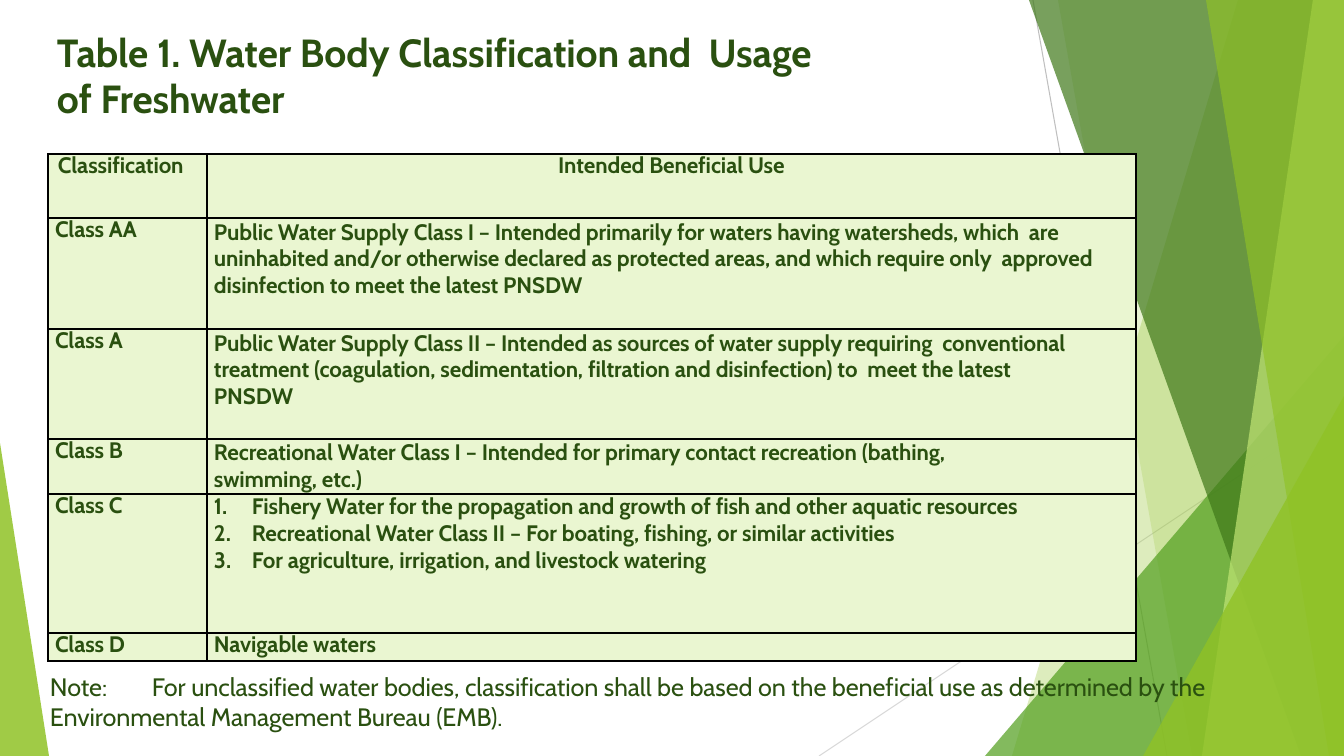
from lxml import etree
from pptx import Presentation
from pptx import util as u
from pptx.dml.color import RGBColor
from pptx.enum import shapes, text
from pptx.oxml import ns

PX = 12192000 / 1344
WIDTH, HEIGHT = 1344, 756

DARK_GREEN = RGBColor(0x2A, 0x50, 0x10)
PALE_GREEN = RGBColor(0xEA, 0xF6, 0xD1)
LIME = RGBColor(0x90, 0xC2, 0x26)
GREEN = RGBColor(0x54, 0xA0, 0x21)
FOREST = RGBColor(0x3F, 0x78, 0x19)
LIGHT_LIME = RGBColor(0xC0, 0xE4, 0x74)
GREY = RGBColor(0xBF, 0xBF, 0xBF)
LIGHT_GREY = RGBColor(0xD9, 0xD9, 0xD9)


def add_xml(parent, tag, **attributes):
    return etree.SubElement(parent, ns.qn(tag), attributes)


def format_paragraph(paragraph, size, bold, line_spacing, space_before=0):
    paragraph.line_spacing = line_spacing
    paragraph.space_before = u.Pt(space_before)
    for run in paragraph.runs:
        run.font.name = "Cabin"
        run.font.size = u.Pt(size)
        run.font.bold = bold
        run.font.color.rgb = DARK_GREEN
        run.font._element.set("spc", "-5")


prs = Presentation()
prs.slide_width = round(WIDTH * PX)
prs.slide_height = round(HEIGHT * PX)
slide = prs.slides.add_slide(prs.slide_layouts[5])

# Thin lines behind the facets
for x1, y1, x2, y2, color in [
    (1033, 0, 1167, HEIGHT, GREY),
    (WIDTH, 406, 819, HEIGHT, LIGHT_GREY),
]:
    ray = slide.shapes.add_connector(
        shapes.MSO_CONNECTOR.STRAIGHT, *(round(v * PX) for v in (x1, y1, x2, y2)))
    ray.line.color.rgb = color
    ray.line.width = u.Pt(0.75)
    add_xml(ray._element.spPr, "a:effectLst")

# Translucent facets: outline, colour, opacity in percent
TOP_RIGHT, BOTTOM_RIGHT = (WIDTH, 0), (WIDTH, HEIGHT)
for outline, color, opacity in [
    ([TOP_RIGHT, (1238, 0), (1012, HEIGHT), BOTTOM_RIGHT], LIME, 30),
    ([TOP_RIGHT, (1058, 0), (1192, HEIGHT), BOTTOM_RIGHT], LIME, 20),
    ([(WIDTH, 336), (985, HEIGHT), BOTTOM_RIGHT], GREEN, 72),
    ([TOP_RIGHT, (1029, 0), (1301, HEIGHT), BOTTOM_RIGHT], FOREST, 70),
    ([TOP_RIGHT, (1313, 0), (1202, HEIGHT), BOTTOM_RIGHT], LIGHT_LIME, 70),
    ([TOP_RIGHT, (1206, 0), (1329, HEIGHT), BOTTOM_RIGHT], LIME, 65),
    ([(WIDTH, 396), (1143, HEIGHT), BOTTOM_RIGHT], LIME, 80),
    ([(0, 443), (0, HEIGHT), (49, HEIGHT)], LIME, 85),
]:
    builder = slide.shapes.build_freeform(*outline[0], scale=PX)
    builder.add_line_segments(outline[1:], close=True)
    facet = builder.convert_to_shape()
    facet.shadow.inherit = False
    facet.line.fill.background()
    facet.fill.solid()
    facet.fill.fore_color.rgb = color
    tint = facet._element.spPr.find(".//" + ns.qn("a:srgbClr"))
    add_xml(tint, "a:alpha", val=str(opacity * 1000))

# Title
title = slide.shapes.title
title.left, title.top, title.width, title.height = (
    round(v * PX) for v in (56, 25, 759, 96))
frame = title.text_frame
frame.text = "Table 1. Water Body Classification and  Usage of Freshwater"
frame.word_wrap = True
frame.auto_size = text.MSO_AUTO_SIZE.NONE
frame.vertical_anchor = text.MSO_ANCHOR.TOP
frame.margin_left, frame.margin_top = round(PX), round(4 * PX)
frame.margin_right = frame.margin_bottom = 0
frame.paragraphs[0].alignment = text.PP_ALIGN.LEFT
format_paragraph(frame.paragraphs[0], 28, True, u.Pt(32.9), 2.6)

# Table: height, class, use, right margin of the use
ROWS = [
    (64, "Classification", "Intended Beneficial Use", 0),
    (111, "Class AA",
     "Public Water Supply Class I – Intended primarily for waters having watersheds, "
     "which  are uninhabited and/or otherwise declared as protected areas, and which "
     "require only  approved disinfection to meet the latest PNSDW", 10),
    (110, "Class A",
     "Public Water Supply Class II – Intended as sources of water supply requiring  "
     "conventional treatment (coagulation, sedimentation, filtration and disinfection) "
     "to  meet the latest PNSDW", 55),
    (55, "Class B",
     "Recreational Water Class I – Intended for primary contact recreation "
     "(bathing, swimming, etc.)", 140),
    (139, "Class C",
     "Fishery Water for the propagation and growth of fish and other aquatic resources\n"
     "Recreational Water Class II – For boating, fishing, or similar activities\n"
     "For agriculture, irrigation, and livestock watering", 0),
    (28, "Class D", "Navigable waters", 0),
]
COLUMNS = [159, 929]
table = slide.shapes.add_table(
    len(ROWS), len(COLUMNS), round(48 * PX), round(154 * PX),
    round(sum(COLUMNS) * PX), round(sum(row[0] for row in ROWS) * PX)).table
table.first_row = table.horz_banding = False
for column, width in zip(table.columns, COLUMNS):
    column.width = round(width * PX)

for r, (height, water_class, use, use_margin) in enumerate(ROWS):
    table.rows[r].height = round(height * PX)
    for c, wording in enumerate((water_class, use)):
        cell = table.cell(r, c)
        cell.text = wording
        is_header, wraps = r == 0, c == 1 and 1 <= r <= 3
        cell.margin_left = round((10 if is_header and c == 0 else 0 if is_header else 7) * PX)
        cell.margin_right = round(use_margin * c * PX)
        cell.margin_top = round(PX) if wraps else 0
        cell.margin_bottom = 0
        for side in ("a:lnL", "a:lnR", "a:lnT", "a:lnB"):
            border = add_xml(cell._tc.get_or_add_tcPr(), side, w=str(u.Pt(1.5)))
            add_xml(add_xml(border, "a:solidFill"), "a:srgbClr", val="000000")
        cell.fill.solid()
        cell.fill.fore_color.rgb = PALE_GREEN

        paragraphs = cell.text_frame.paragraphs
        is_list = len(paragraphs) > 1
        for paragraph in paragraphs:
            spacing = 19 if wraps or is_list else 18.2
            format_paragraph(paragraph, 16, True, u.Pt(spacing), 0.8 if wraps else 0)
            if is_header and c == 1:
                paragraph.alignment = text.PP_ALIGN.CENTER
            if is_list:
                properties = paragraph._p.get_or_add_pPr()
                properties.set("marL", str(round(38 * PX)))
                properties.set("indent", str(round(-38 * PX)))
                add_xml(properties, "a:buFont", typeface="Cabin")
                add_xml(properties, "a:buAutoNum", type="arabicPeriod")

# Note below the table
note = slide.shapes.add_textbox(*(round(v * PX) for v in (49, 670, 1230, 64))).text_frame
note.text = ("Note:\tFor unclassified water bodies, classification shall be based on the "
             "beneficial use as determined by the Environmental Management Bureau (EMB).")
note.word_wrap = True
note.margin_left = note.margin_top = round(PX)
note.margin_right = note.margin_bottom = 0
format_paragraph(note.paragraphs[0], 18, False, 1.01, 0.8)
tabs = add_xml(note.paragraphs[0]._p.get_or_add_pPr(), "a:tabLst")
add_xml(tabs, "a:tab", pos=str(round(102 * PX)), algn="l")

prs.save("out.pptx")
